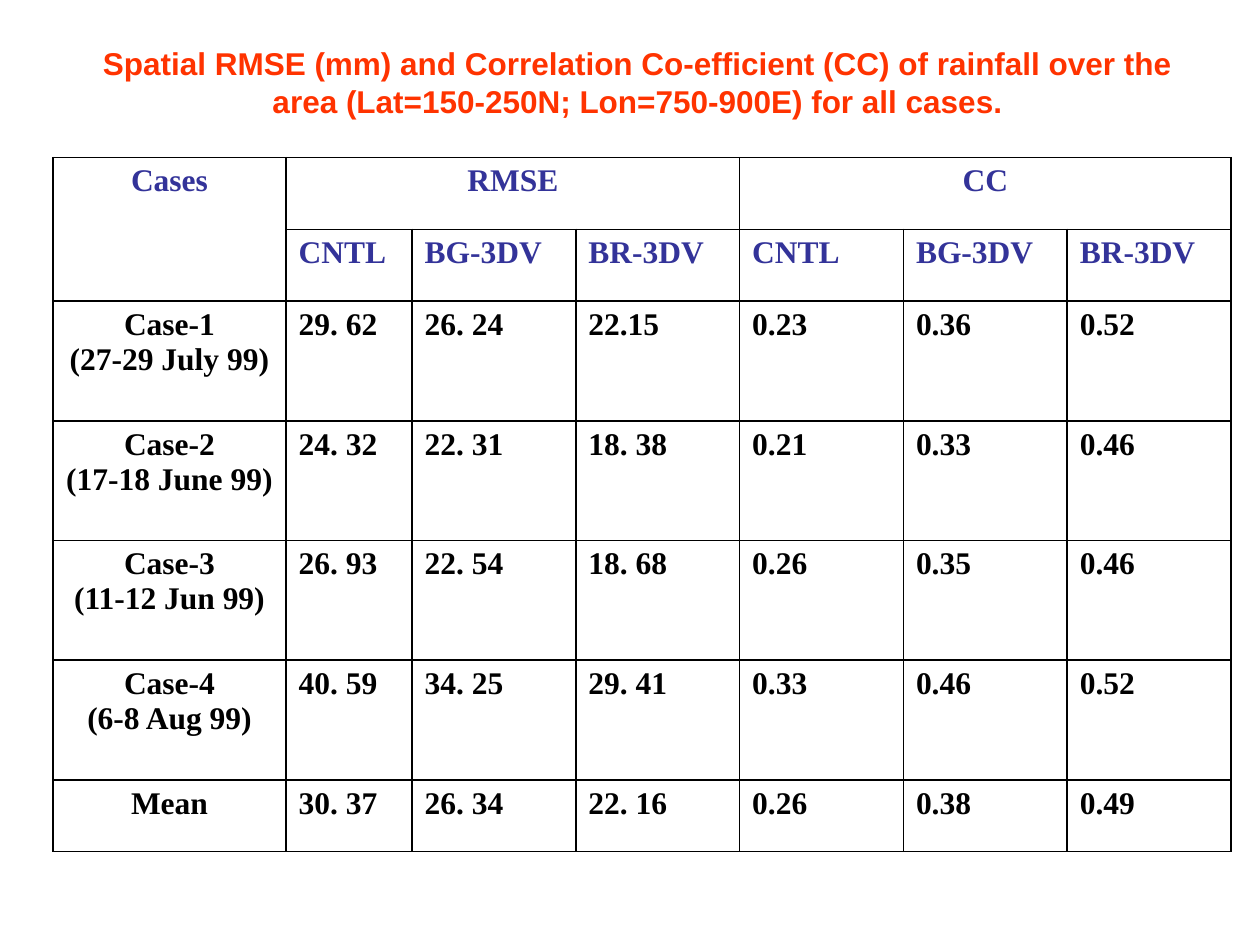
import pptx
import pptx.dml.color
import pptx.enum.text
import pptx.oxml
import pptx.oxml.ns
import pptx.util

Inches = pptx.util.Inches
Pt = pptx.util.Pt
RGBColor = pptx.dml.color.RGBColor
PP_ALIGN = pptx.enum.text.PP_ALIGN

ORANGE_RED = RGBColor(0xFF, 0x33, 0x00)
INDIGO = RGBColor(0x33, 0x33, 0x99)
BLACK = RGBColor(0x00, 0x00, 0x00)

TITLE = ("Spatial RMSE (mm) and Correlation Co-efficient (CC) of rainfall over the "
         "area (Lat=150-250N; Lon=750-900E) for all cases.")
EXPERIMENTS = ["CNTL", "BG-3DV", "BR-3DV"]
HEADERS = [
    ["Cases", "RMSE", "", "", "CC", "", ""],
    [""] + EXPERIMENTS * 2,
]
RESULTS = [
    ["Case-1\n(27-29 July 99)", "29. 62", "26. 24", "22.15", "0.23", "0.36", "0.52"],
    ["Case-2\n(17-18 June 99)", "24. 32", "22. 31", "18. 38", "0.21", "0.33", "0.46"],
    ["Case-3\n(11-12 Jun 99)", "26. 93", "22. 54", "18. 68", "0.26", "0.35", "0.46"],
    ["Case-4\n(6-8 Aug 99)", "40. 59", "34. 25", "29. 41", "0.33", "0.46", "0.52"],
    ["Mean", "30. 37", "26. 34", "22. 16", "0.26", "0.38", "0.49"],
]
COLUMN_WIDTHS = [1.85, 1.0] + [1.3] * 5
ROW_HEIGHTS = [0.57] * 2 + [0.95] * 4 + [0.57]
# First and last (row, column) of each merged header
MERGES = [((0, 0), (1, 0)), ((0, 1), (0, 3)), ((0, 4), (0, 6))]


def apply_format(target, values):
    for name, value in values.items():
        setattr(target, name, value)


def format_text(frame, font_name, color, alignment):
    for paragraph in frame.paragraphs:
        paragraph.alignment = alignment
        for run in paragraph.runs:
            apply_format(run.font, {"name": font_name, "size": Pt(18), "bold": True})
            run.font.color.rgb = color


def add_borders(cell):
    properties = cell._tc.get_or_add_tcPr()
    for side in ("lnL", "lnR", "lnT", "lnB"):
        properties.append(pptx.oxml.parse_xml(
            f'<a:{side} {pptx.oxml.ns.nsdecls("a")} w="{Pt(1)}">'
            f'<a:solidFill><a:srgbClr val="{BLACK}"/></a:solidFill></a:{side}>'))


def add_title(slide):
    title = slide.shapes.title
    apply_format(title, {"left": Inches(0.52), "top": Inches(0.3),
                         "width": Inches(9.08), "height": Inches(0.7)})
    frame = title.text_frame
    frame.text = TITLE
    apply_format(frame, {"word_wrap": True,
                         "auto_size": pptx.enum.text.MSO_AUTO_SIZE.NONE,
                         "vertical_anchor": pptx.enum.text.MSO_ANCHOR.TOP})
    format_text(frame, "Arial", ORANGE_RED, PP_ALIGN.CENTER)


def add_scores(slide):
    rows = HEADERS + RESULTS
    scores = slide.shapes.add_table(
        len(rows), len(COLUMN_WIDTHS), Inches(0.42), Inches(1.25),
        Inches(sum(COLUMN_WIDTHS)), Inches(sum(ROW_HEIGHTS))).table
    apply_format(scores, {"first_row": False, "horz_banding": False})
    for column, width in zip(scores.columns, COLUMN_WIDTHS):
        column.width = Inches(width)
    for row, height in zip(scores.rows, ROW_HEIGHTS):
        row.height = Inches(height)

    for r, texts in enumerate(rows):
        color = INDIGO if r < len(HEADERS) else BLACK
        for c, text in enumerate(texts):
            cell = scores.cell(r, c)
            cell.text = text
            add_borders(cell)
            cell.fill.background()
            # Case labels and group headers are centred
            alignment = PP_ALIGN.CENTER if r == 0 or c == 0 else PP_ALIGN.LEFT
            format_text(cell.text_frame, "Times New Roman", color, alignment)

    for first, last in MERGES:
        scores.cell(*first).merge(scores.cell(*last))


def main():
    deck = pptx.Presentation()
    apply_format(deck, {"slide_width": Inches(10), "slide_height": Inches(7.5)})
    slide = deck.slides.add_slide(deck.slide_layouts[5])  # Title Only
    add_scores(slide)
    add_title(slide)
    deck.save("out.pptx")


if __name__ == "__main__":
    main()
